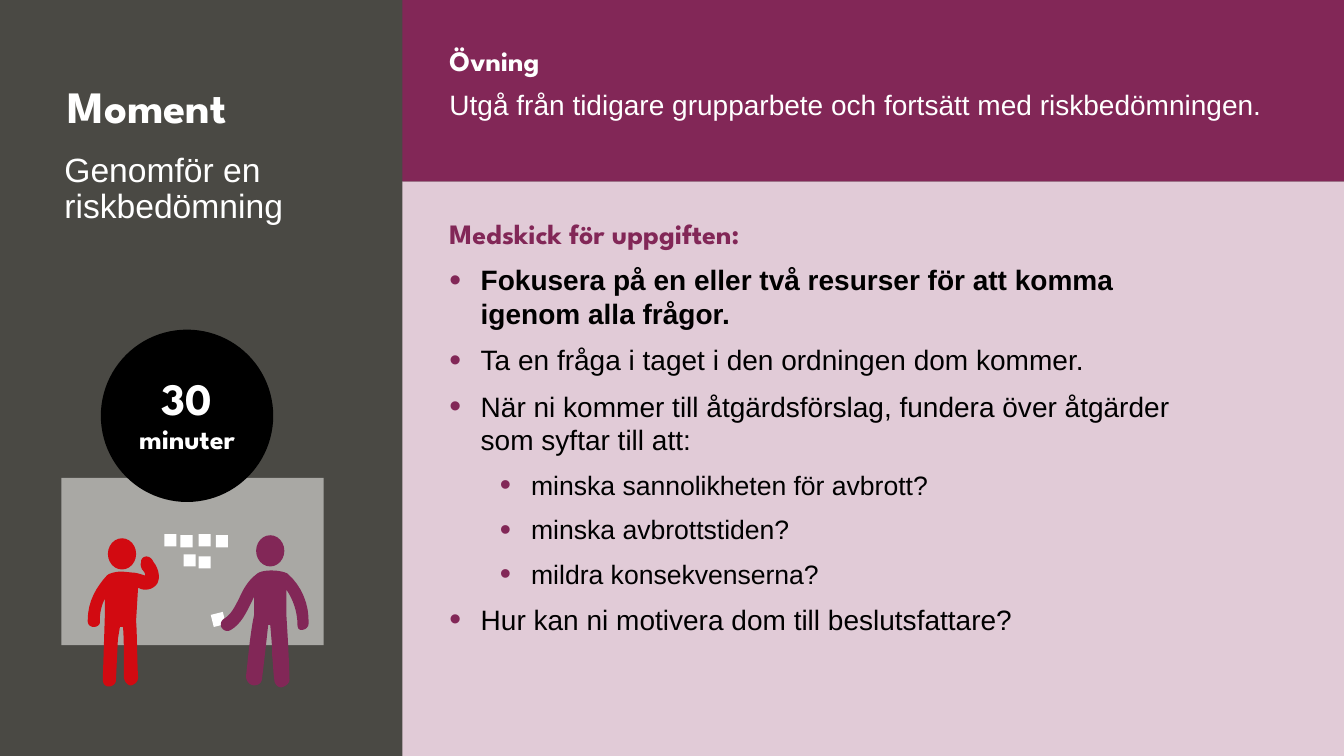
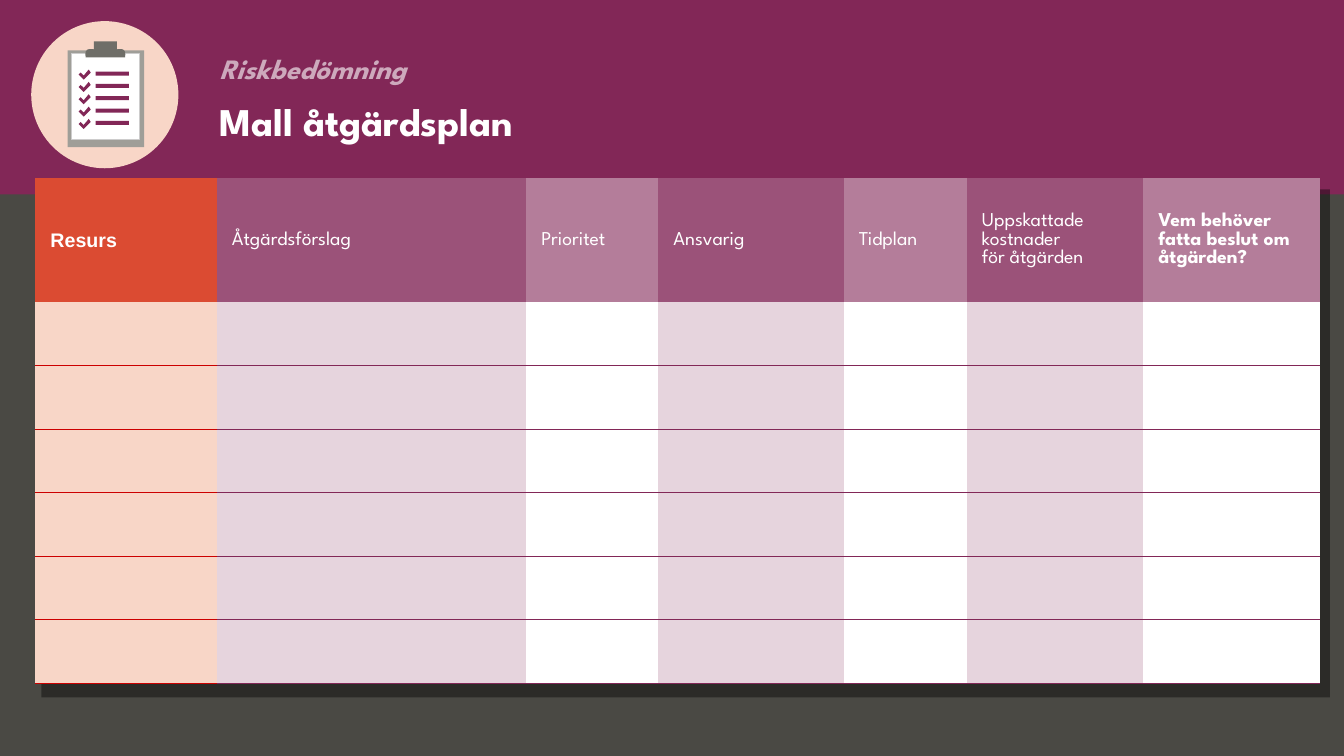
from typing import Any, NamedTuple, Optional

from pptx import Presentation
from pptx import util as u
from pptx.dml.color import RGBColor
from pptx.enum import shapes, text
from pptx.oxml import ns, xmlchemy
from pptx.slide import Slide

PLUM = RGBColor(0x82, 0x27, 0x57)
PLUM_DARK = RGBColor(0x9B, 0x52, 0x79)
PLUM_MID = RGBColor(0xB4, 0x7D, 0x9A)
PLUM_SOFT = RGBColor(0xCD, 0xA9, 0xBC)
PLUM_PALE = RGBColor(0xE1, 0xCB, 0xD7)
PLUM_TINT = RGBColor(0xE6, 0xD4, 0xDD)
PEACH = RGBColor(0xF8, 0xD6, 0xC7)
ORANGE = RGBColor(0xDB, 0x4B, 0x32)
RED = RGBColor(0xD2, 0x0A, 0x11)
RULE_RED = RGBColor(0xCC, 0x00, 0x00)
CHARCOAL = RGBColor(0x4A, 0x49, 0x44)
CLIP_GREY = RGBColor(0x6F, 0x6E, 0x68)
FRAME_GREY = RGBColor(0x9F, 0x9E, 0x98)
BOARD_GREY = RGBColor(0xA9, 0xA8, 0xA4)
EDGE_GREY = RGBColor(0xCD, 0xCC, 0xCC)
WHITE = RGBColor(0xFF, 0xFF, 0xFF)
BLACK = RGBColor(0x00, 0x00, 0x00)

RECT = shapes.MSO_SHAPE.RECTANGLE
OVAL = shapes.MSO_SHAPE.OVAL
NO_TABLE_STYLE = "{2D5ABB26-0587-4C30-8999-92F81FD0307C}"


class Style(NamedTuple):
    color: RGBColor
    font: dict[str, Any]
    spacing: Optional[float] = None


def heading(size: int, color: RGBColor = WHITE, italic: bool = False) -> Style:
    return Style(color, {"name": "League Spartan", "size": u.Pt(size), "bold": True,
                         "italic": italic}, 0.9)


def body(size: int, color: RGBColor = BLACK, bold: bool = False,
         spacing: Optional[float] = None) -> Style:
    return Style(color, {"name": "Arial", "size": u.Pt(size), "bold": bold}, spacing)


class Box(NamedTuple):
    left: float
    top: float
    width: float
    height: float

    def emu(self) -> list[u.Length]:
        return [u.Inches(side) for side in self]


class Advice(NamedTuple):
    words: str
    level: int = 0
    bold: bool = False


class Column(NamedTuple):
    label: str
    width: float
    head_fill: RGBColor
    body_fill: RGBColor
    rule: RGBColor = PLUM
    font: str = "League Spartan"
    bold: bool = False


ADVICE = [
    Advice("Fokusera på en eller två resurser för att komma igenom alla frågor.", bold=True),
    Advice("Ta en fråga i taget i den ordningen dom kommer."),
    Advice("När ni kommer till åtgärdsförslag, fundera över åtgärder som syftar till att:"),
    Advice("minska sannolikheten för avbrott?", 1),
    Advice("minska avbrottstiden?", 1),
    Advice("mildra konsekvenserna?", 1),
    Advice("Hur kan ni motivera dom till beslutsfattare?"),
]

COLUMNS = [
    Column("Resurs", 1.8, ORANGE, PEACH, RULE_RED, "Arial", True),
    Column("Åtgärdsförslag", 3.07, PLUM_DARK, PLUM_TINT),
    Column("Prioritet", 1.31, PLUM_MID, WHITE),
    Column("Ansvarig", 1.84, PLUM_DARK, PLUM_TINT),
    Column("Tidplan", 1.22, PLUM_MID, WHITE),
    Column("Uppskattade kostnader\vför åtgärden", 1.75, PLUM_DARK, PLUM_TINT),
    Column("Vem behöver fatta beslut om åtgärden?", 1.75, PLUM_MID, WHITE, bold=True),
]
HEAD_HEIGHT, ROW_HEIGHT, EMPTY_ROWS = 1.23, 0.63, 6

# Outlines in inches: two numbers are a line, six numbers a Bézier curve.
Outline = list[tuple[float, ...]]
PLACING_BODY: Outline = [
    (2.85, 5.69), (2.81, 5.67, 2.75, 5.66, 2.69, 5.66), (2.63, 5.66, 2.57, 5.67, 2.54, 5.7),
    (2.46, 5.76, 2.41, 5.85, 2.37, 5.94), (2.33, 6.02, 2.29, 6.1, 2.22, 6.14),
    (2.19, 6.16, 2.18, 6.2, 2.2, 6.23), (2.22, 6.26, 2.26, 6.27, 2.29, 6.25),
    (2.39, 6.19, 2.44, 6.09, 2.52, 5.92), (2.52, 6.1), (2.48, 6.28, 2.45, 6.63, 2.44, 6.71),
    (2.44, 6.76, 2.48, 6.8, 2.52, 6.8), (2.57, 6.8, 2.6, 6.77, 2.6, 6.72),
    (2.61, 6.65, 2.64, 6.38, 2.66, 6.2), (2.68, 6.2), (2.69, 6.31, 2.7, 6.41, 2.7, 6.51),
    (2.71, 6.6, 2.71, 6.68, 2.72, 6.74), (2.72, 6.78, 2.75, 6.82, 2.79, 6.82),
    (2.84, 6.81, 2.88, 6.77, 2.87, 6.73), (2.87, 6.59, 2.85, 6.25, 2.84, 6.1), (2.84, 5.85),
    (2.91, 5.95, 2.95, 6.08, 2.95, 6.19), (2.95, 6.23, 2.96, 6.25, 2.99, 6.25),
    (3.03, 6.25, 3.06, 6.22, 3.06, 6.19), (3.07, 6, 2.99, 5.81, 2.85, 5.69),
]
THINKING_BODY: Outline = [
    (1.52, 5.57), (1.52, 5.57, 1.5, 5.52, 1.45, 5.52), (1.39, 5.53, 1.4, 5.58, 1.4, 5.58),
    (1.39, 5.6, 1.4, 5.63, 1.41, 5.65), (1.44, 5.68, 1.44, 5.7, 1.44, 5.71),
    (1.41, 5.7, 1.35, 5.68, 1.31, 5.68), (1.21, 5.67), (1.17, 5.67, 1.09, 5.68, 1.06, 5.71),
    (0.96, 5.82, 0.87, 5.96, 0.87, 6.16), (0.87, 6.2, 0.9, 6.22, 0.93, 6.22),
    (0.97, 6.22, 1, 6.19, 0.99, 6.16), (0.99, 6.07, 1.01, 6, 1.04, 5.94), (1.04, 6.12),
    (1.03, 6.43), (1.02, 6.74), (1.02, 6.78, 1.04, 6.81, 1.08, 6.81),
    (1.12, 6.81, 1.15, 6.78, 1.15, 6.75), (1.17, 6.34), (1.19, 6.22), (1.22, 6.22),
    (1.23, 6.3, 1.23, 6.57, 1.23, 6.73), (1.24, 6.77, 1.27, 6.8, 1.3, 6.8),
    (1.34, 6.79, 1.37, 6.76, 1.37, 6.72), (1.36, 6.57, 1.36, 6.25, 1.35, 6.16), (1.37, 5.83),
    (1.39, 5.84, 1.41, 5.85, 1.44, 5.85), (1.49, 5.85, 1.53, 5.83, 1.56, 5.79),
    (1.59, 5.73, 1.58, 5.65, 1.52, 5.57),
]
HELD_NOTE: Outline = [(2.09, 6.1), (2.21, 6.07), (2.24, 6.19), (2.12, 6.22)]
CLIP: Outline = [
    (1.23, 0.5), (1.22, 0.48, 1.16, 0.49, 1.16, 0.49), (1.16, 0.41), (0.93, 0.41),
    (0.93, 0.49), (0.93, 0.49, 0.87, 0.48, 0.86, 0.5), (0.84, 0.51, 0.85, 0.57, 0.85, 0.57),
    (1.24, 0.57), (1.24, 0.57, 1.25, 0.51, 1.23, 0.5),
]
CHECK: Outline = [(0.78, 0.74), (0.8, 0.72), (0.83, 0.75), (0.88, 0.69), (0.9, 0.72),
                  (0.83, 0.79)]
BOARD_NOTES = [(1.63, 5.3), (1.79, 5.31), (1.97, 5.3), (2.14, 5.31), (1.97, 5.52), (1.82, 5.5)]


def paint(shape: Any, fill: RGBColor) -> Any:
    shape.shadow.inherit = False
    shape.fill.solid()
    shape.fill.fore_color.rgb = fill
    shape.line.fill.background()
    return shape


def add_block(slide: Slide, kind: shapes.MSO_SHAPE, box: Box, fill: RGBColor) -> Any:
    return paint(slide.shapes.add_shape(kind, *box.emu()), fill)


def flatten(outline: Outline, steps: int = 8) -> list[tuple[float, float]]:
    """Turn the curves of an outline into short straight lines."""
    points = [outline[0]]
    for segment in outline[1:]:
        if len(segment) == 2:
            points.append(segment)
            continue
        corners = [points[-1], segment[:2], segment[2:4], segment[4:]]
        for step in range(1, steps + 1):
            t = step / steps
            weights = ((1 - t) ** 3, 3 * t * (1 - t) ** 2, 3 * t * t * (1 - t), t ** 3)
            points.append(tuple(sum(w * c[axis] for w, c in zip(weights, corners))
                                for axis in (0, 1)))
    return points


def add_outline(slide: Slide, outline: Outline, fill: RGBColor, drop: float = 0) -> None:
    """Draw an outline, moved down by drop inches."""
    points = [(u.Inches(x), u.Inches(y + drop)) for x, y in flatten(outline)]
    builder = slide.shapes.build_freeform(*points[0], scale=1.0)
    builder.add_line_segments(points[1:], close=True)
    paint(builder.convert_to_shape(), fill)


def add_run(paragraph: Any, words: str, style: Style) -> None:
    if style.spacing:
        paragraph.line_spacing = style.spacing
    paragraph.add_run().text = words
    font = paragraph.runs[-1].font
    for attribute, value in style.font.items():
        setattr(font, attribute, value)
    font.color.rgb = style.color


def add_text(slide: Slide, box: Box, words: str, style: Style) -> None:
    frame = slide.shapes.add_textbox(*box.emu()).text_frame
    frame.word_wrap = True
    add_run(frame.paragraphs[0], words, style)


def add_child(parent: Any, tag: str, **attributes: Any) -> Any:
    child = xmlchemy.OxmlElement(tag)
    for name, value in attributes.items():
        child.set(name, str(value))
    parent.append(child)
    return child


def add_advice(slide: Slide, box: Box) -> None:
    frame = slide.shapes.add_textbox(*box.emu()).text_frame
    frame.word_wrap = True
    for index, advice in enumerate(ADVICE):
        paragraph = frame.add_paragraph() if index else frame.paragraphs[0]
        paragraph.level = advice.level
        properties = paragraph._p.get_or_add_pPr()
        properties.set("marL", str(u.Inches(0.31 + 0.5 * advice.level)))
        properties.set("indent", str(u.Inches(-0.31)))
        add_child(add_child(properties, "a:buClr"), "a:srgbClr", val=PLUM)
        add_child(properties, "a:buSzPct", val=120000)
        add_child(properties, "a:buFont", typeface="Arial")
        add_child(properties, "a:buChar", char="•")
        paragraph.space_after = u.Pt(9)
        add_run(paragraph, advice.words, body(19 if advice.level else 20, bold=advice.bold))


def add_rule(cell: Any, edge: str, color: RGBColor) -> None:
    line = add_child(cell._tc.get_or_add_tcPr(), edge, w=u.Pt(1))
    add_child(add_child(line, "a:solidFill"), "a:srgbClr", val=color)


def add_action_table(slide: Slide, box: Box) -> None:
    frame = slide.shapes.add_table(EMPTY_ROWS + 1, len(COLUMNS), *box.emu())
    for style_id in frame.element.iter(ns.qn("a:tableStyleId")):
        style_id.text = NO_TABLE_STYLE
    table = frame.table
    table.first_row = table.horz_banding = False
    for index, row in enumerate(table.rows):
        row.height = u.Inches(ROW_HEIGHT if index else HEAD_HEIGHT)
    for index, column in enumerate(COLUMNS):
        table.columns[index].width = u.Inches(column.width)
        for row in range(EMPTY_ROWS + 1):
            cell = table.cell(row, index)
            if row > 1:
                add_rule(cell, "a:lnT", column.rule)
            if row:
                add_rule(cell, "a:lnB", column.rule)
            cell.fill.solid()
            cell.fill.fore_color.rgb = column.body_fill if row else column.head_fill
        head = table.cell(0, index)
        head.vertical_anchor = text.MSO_ANCHOR.MIDDLE
        for side in ("left", "right", "top", "bottom"):
            setattr(head, f"margin_{side}", u.Inches(0.15))
        label = head.text_frame
        label.text = column.label
        for run in label.paragraphs[0].runs:
            for attribute, value in {"name": column.font, "size": u.Pt(14),
                                     "bold": column.bold}.items():
                setattr(run.font, attribute, value)
            run.font.color.rgb = WHITE


def add_timer(slide: Slide, box: Box) -> None:
    frame = add_block(slide, OVAL, box, BLACK).text_frame
    frame.word_wrap = True
    frame.vertical_anchor = text.MSO_ANCHOR.MIDDLE
    for side in ("left", "right", "top", "bottom"):
        setattr(frame, f"margin_{side}", 0)
    paragraph = frame.paragraphs[0]
    paragraph.alignment = text.PP_ALIGN.CENTER
    add_run(paragraph, "30", heading(32))
    add_run(paragraph, " minuter", heading(20))


def add_group_work(slide: Slide) -> None:
    """Draw two people putting notes on a board."""
    add_block(slide, RECT, Box(0.61, 4.74, 2.6, 1.66), BOARD_GREY)
    add_outline(slide, HELD_NOTE, WHITE)
    for head_left, head_top, outline, color in ((2.54, 5.31, PLACING_BODY, PLUM),
                                                (1.07, 5.34, THINKING_BODY, RED)):
        add_block(slide, OVAL, Box(head_left, head_top, 0.28, 0.31), color)
        add_outline(slide, outline, color)
    for left, top in BOARD_NOTES:
        add_block(slide, RECT, Box(left, top, 0.12, 0.12), WHITE)


def add_clipboard(slide: Slide) -> None:
    add_block(slide, RECT, Box(0.67, 0.5, 0.76, 0.96), FRAME_GREY)
    paper = add_block(slide, RECT, Box(0.71, 0.53, 0.67, 0.85), WHITE)
    paper.line.color.rgb = EDGE_GREY
    paper.line.width = u.Pt(0.75)
    add_outline(slide, CLIP, CLIP_GREY)
    for item in range(5):
        drop = 0.49 * item / 4
        add_outline(slide, CHECK, PLUM, drop)
        add_block(slide, RECT, Box(0.95, 0.71 + drop, 0.33, 0.04), PLUM)


def build_exercise(slide: Slide) -> None:
    add_text(slide, Box(0.54, 1.47, 2.95, 0.83), "Genomför en riskbedömning",
             body(24, WHITE, spacing=0.9))
    add_block(slide, RECT, Box(3.99, 1.8, 9.34, 5.7), PLUM_PALE)
    add_advice(slide, Box(4.36, 2.56, 7.44, 3.84))
    add_text(slide, Box(4.36, 2.14, 5.86, 0.33), "Medskick för uppgiften:", heading(20, PLUM))
    add_block(slide, RECT, Box(3.99, 0, 9.34, 1.8), PLUM)
    add_text(slide, Box(4.36, 0.42, 1.23, 0.36), "Övning", heading(20))
    add_text(slide, Box(4.36, 0.82, 8.44, 0.44),
             "Utgå från tidigare grupparbete och fortsätt med riskbedömningen.", body(20, WHITE))
    add_text(slide, Box(0.57, 0.79, 2.49, 0.56), "Moment", heading(32))
    add_group_work(slide)
    add_timer(slide, Box(1, 3.27, 1.71, 1.71))


def build_action_plan(slide: Slide) -> None:
    add_block(slide, RECT, Box(0, 0, 13.33, 1.93), PLUM)
    add_block(slide, OVAL, Box(0.31, 0.21, 1.46, 1.46), PEACH)
    add_text(slide, Box(2.08, 0.5, 4.44, 0.37), "Riskbedömning", heading(20, PLUM_SOFT, True))
    add_text(slide, Box(2.08, 0.97, 7.16, 0.56), "Mall åtgärdsplan", heading(28))
    shade = add_block(slide, RECT, Box(0.41, 1.88, 12.78, 5.04), BLACK)
    add_child(next(shade.element.iter(ns.qn("a:srgbClr"))), "a:alpha", val=40000)
    add_action_table(slide, Box(0.35, 1.77, 12.74, HEAD_HEIGHT + EMPTY_ROWS * ROW_HEIGHT))
    add_clipboard(slide)


def main() -> None:
    deck = Presentation()
    deck.slide_width, deck.slide_height = u.Inches(13.33), u.Inches(7.5)
    backdrop = deck.slide_master.background.fill
    backdrop.solid()
    backdrop.fore_color.rgb = CHARCOAL
    for build in (build_exercise, build_action_plan):
        build(deck.slides.add_slide(deck.slide_layouts[6]))
    deck.save("out.pptx")


if __name__ == "__main__":
    main()
